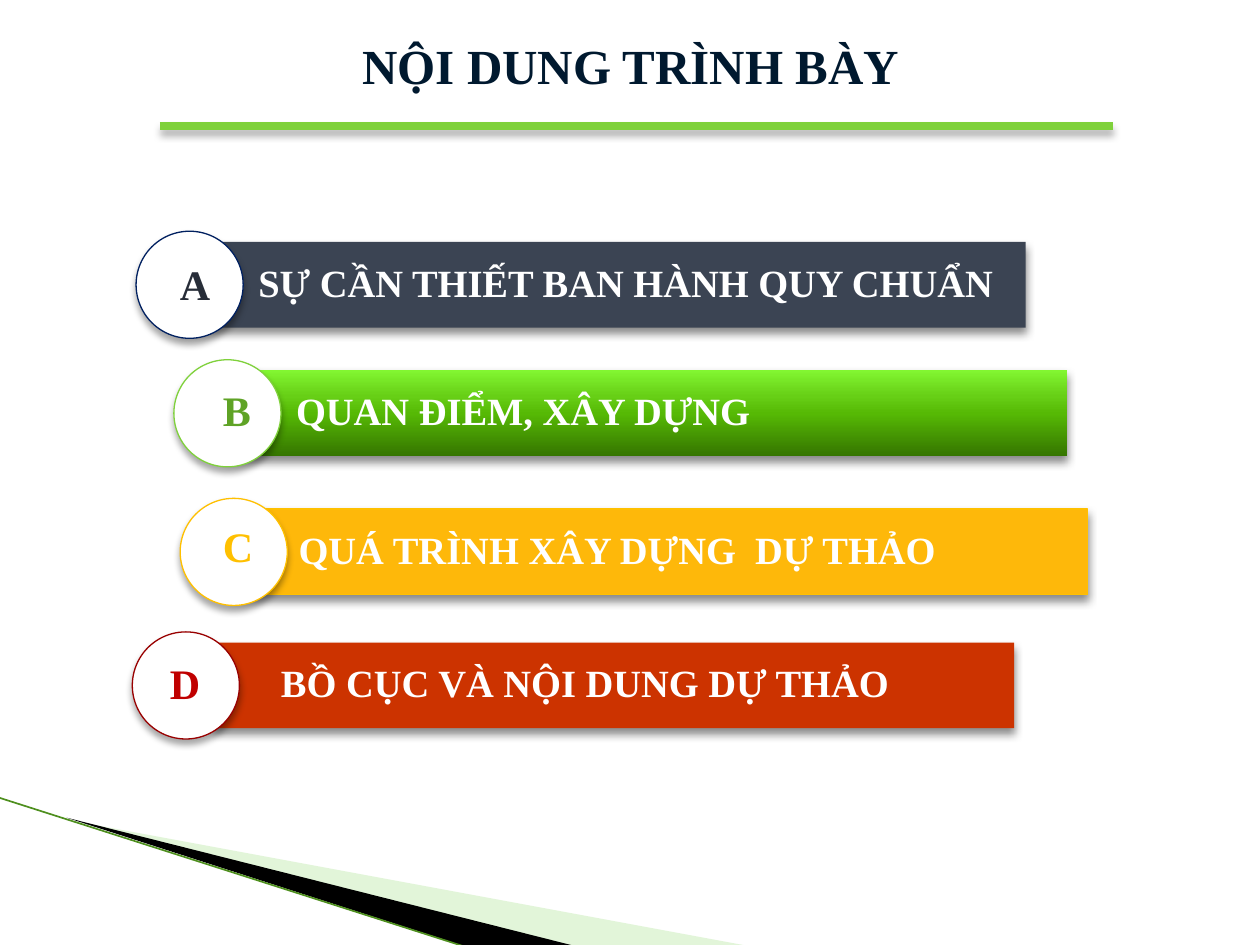
from typing import NamedTuple, Optional

from lxml import etree
from pptx import Presentation, util as u
from pptx.dml.color import RGBColor
from pptx.enum import shapes, text
from pptx.oxml import ns

Inches = u.Inches
FONT = "Times New Roman"
WHITE = RGBColor(0xFF, 0xFF, 0xFF)
BLACK = RGBColor(0x00, 0x00, 0x00)
TITLE_NAVY = RGBColor(0x00, 0x19, 0x2F)
LIME = RGBColor(0x7F, 0xD1, 0x3B)
PALE_GREEN = RGBColor(0xB8, 0xE7, 0xA1)
EDGE_GREEN = RGBColor(0x4E, 0x8F, 0x1E)
SLATE = RGBColor(0x3B, 0x44, 0x53)
DARK_SLATE = RGBColor(0x27, 0x2D, 0x38)
NAVY = RGBColor(0x00, 0x20, 0x60)
LEAF = RGBColor(0x5F, 0xA3, 0x26)
AMBER = RGBColor(0xFE, 0xB8, 0x0A)
GOLD = RGBColor(0xFF, 0xC0, 0x00)
BRICK = RGBColor(0xCC, 0x33, 0x00)
MAROON = RGBColor(0x99, 0x00, 0x00)
RED = RGBColor(0xC0, 0x00, 0x00)
GREEN_STOPS = [
    (0, RGBColor(0x35, 0x75, 0x00)),
    (50, RGBColor(0x56, 0xB9, 0x05)),
    (70, RGBColor(0x67, 0xCF, 0x16)),
    (100, RGBColor(0x82, 0xF6, 0x31)),
]

BAR_HEIGHT = 0.68
CIRCLE_SIZE = 0.85
LETTER_SIZE = 0.5


class Section(NamedTuple):
    letter: str
    heading: str
    bar_left: float
    bar_top: float
    bar_width: float
    circle_left: float
    letter_left: float
    letter_top: float
    bar_color: Optional[RGBColor]  # None means the green gradient
    bar_edge: Optional[RGBColor]
    circle_edge: RGBColor
    letter_color: RGBColor
    indent: float = 0.54


SECTIONS = [
    Section("A", "SỰ CẦN THIẾT BAN HÀNH QUY CHUẨN", 1.43, 1.92, 6.71, 1.08,
            1.33, 2, SLATE, None, NAVY, DARK_SLATE, 0.62),
    Section("B", "QUAN ĐIỂM, XÂY DỰNG", 1.81, 2.94, 6.66, 1.38,
            1.67, 3, None, None, LIME, LEAF),
    Section("C", "QUÁ TRÌNH XÂY DỰNG  DỰ THẢO", 1.83, 4.04, 6.8, 1.43,
            1.67, 4.08, AMBER, GOLD, GOLD, GOLD),
    Section("D", "BỒ CỤC VÀ NỘI DUNG DỰ THẢO", 1.69, 5.1, 6.36, 1.05,
            1.25, 5.17, BRICK, None, MAROON, RED),
]


def sub(parent, tag: str, **attributes):
    return etree.SubElement(parent, ns.qn(tag), attributes)


def add_shadow(shape, opacity: int, blur: float) -> None:
    """Drop a soft black shadow 3 pt straight down."""
    effects = sub(shape._element.spPr, "a:effectLst")
    outer = sub(effects, "a:outerShdw", blurRad=str(u.Pt(blur)),
                dist=str(u.Pt(3)), dir="5400000", rotWithShape="0")
    color = sub(outer, "a:srgbClr", val=str(BLACK))
    sub(color, "a:alpha", val=str(opacity * 1000))


def fill_gradient(shape, stops) -> None:
    """Fill from bottom to top through the given stops."""
    shape.fill.gradient()
    shape.fill.gradient_angle = 90
    stop_list = shape._element.spPr.find(".//" + ns.qn("a:gsLst"))
    for old in list(stop_list):
        stop_list.remove(old)
    for position, color in stops:
        stop = sub(stop_list, "a:gs", pos=str(position * 1000))
        sub(stop, "a:srgbClr", val=str(color))


def write(shape, words: str, size: float, color: RGBColor, frame_format=None,
          paragraph_format=None) -> None:
    frame = shape.text_frame
    for name, value in (frame_format or {}).items():
        setattr(frame, name, value)
    paragraph = frame.paragraphs[0]
    for name, value in (paragraph_format or {}).items():
        setattr(paragraph, name, value)
    run = paragraph.add_run()
    run.text = words
    run.font.color.rgb = color
    for name, value in {"name": FONT, "size": u.Pt(size), "bold": True}.items():
        setattr(run.font, name, value)


def outline(shape, color: Optional[RGBColor], width: float = 0.75) -> None:
    if color is None:
        shape.line.fill.background()
    else:
        shape.line.color.rgb = color
        shape.line.width = u.Pt(width)


def add_line(slide, start, end, color: RGBColor, width: float):
    line = slide.shapes.add_connector(
        shapes.MSO_CONNECTOR.STRAIGHT, *map(Inches, start + end))
    outline(line, color, width)
    return line


def add_wedge(slide, points, color: RGBColor):
    corners = [(Inches(x), Inches(y)) for x, y in points]
    builder = slide.shapes.build_freeform(*corners[0])
    builder.add_line_segments(corners[1:], close=True)
    wedge = builder.convert_to_shape()
    wedge.shadow.inherit = False
    wedge.fill.solid()
    wedge.fill.fore_color.rgb = color
    outline(wedge, None)
    return wedge


def add_section(slide, section: Section) -> None:
    # Bar with its heading
    bar = slide.shapes.add_shape(
        shapes.MSO_SHAPE.RECTANGLE, Inches(section.bar_left),
        Inches(section.bar_top), Inches(section.bar_width), Inches(BAR_HEIGHT))
    if section.bar_color is None:
        fill_gradient(bar, GREEN_STOPS)
    else:
        bar.fill.solid()
        bar.fill.fore_color.rgb = section.bar_color
    outline(bar, section.bar_edge)
    add_shadow(bar, 45, 5)
    margin = Inches(0.06)
    write(bar, section.heading, 22, WHITE,
          {"word_wrap": True, "vertical_anchor": text.MSO_ANCHOR.MIDDLE,
           "margin_left": Inches(section.indent), "margin_right": margin,
           "margin_top": margin, "margin_bottom": margin},
          {"alignment": text.PP_ALIGN.LEFT, "line_spacing": 0.9})

    # Circle centred on the bar's height
    circle_top = section.bar_top - (CIRCLE_SIZE - BAR_HEIGHT) / 2
    circle = slide.shapes.add_shape(
        shapes.MSO_SHAPE.OVAL, Inches(section.circle_left), Inches(circle_top),
        Inches(CIRCLE_SIZE), Inches(CIRCLE_SIZE))
    circle.fill.solid()
    circle.fill.fore_color.rgb = WHITE
    outline(circle, section.circle_edge)
    add_shadow(circle, 35, 4)

    # Letter
    letter = slide.shapes.add_textbox(
        Inches(section.letter_left), Inches(section.letter_top),
        Inches(LETTER_SIZE), Inches(LETTER_SIZE))
    write(letter, section.letter, 24, section.letter_color, {"word_wrap": True})


def main() -> None:
    deck = Presentation()
    deck.slide_width, deck.slide_height = Inches(10), Inches(7.5)
    slide = deck.slides.add_slide(deck.slide_layouts[6])

    # Corner decoration
    pale = add_wedge(slide, [(0.55, 6.51), (5.95, 7.51), (4.56, 7.51)], PALE_GREEN)
    pale_color = pale._element.spPr.find(ns.qn("a:solidFill"))[0]
    sub(pale_color, "a:alpha", val="40000")
    add_wedge(slide, [(0.53, 6.49), (4.57, 7.51), (3.72, 7.52)], BLACK)
    edge = add_line(slide, (-0.01, 6.33), (3.71, 7.52), EDGE_GREEN, 0.95)
    sub(edge._element.spPr, "a:effectLst")

    # Title and its rule
    title = slide.shapes.add_textbox(Inches(1.17), 0, Inches(7.67), Inches(1.03))
    write(title, "NỘI DUNG TRÌNH BÀY", 28, TITLE_NAVY,
          {"word_wrap": True, "vertical_anchor": text.MSO_ANCHOR.MIDDLE},
          {"alignment": text.PP_ALIGN.CENTER})
    rule = add_line(slide, (1.27, 1), (8.83, 1), LIME, 4.33)
    add_shadow(rule, 35, 4)

    # Agenda
    for section in SECTIONS:
        add_section(slide, section)

    deck.save("out.pptx")


if __name__ == "__main__":
    main()
